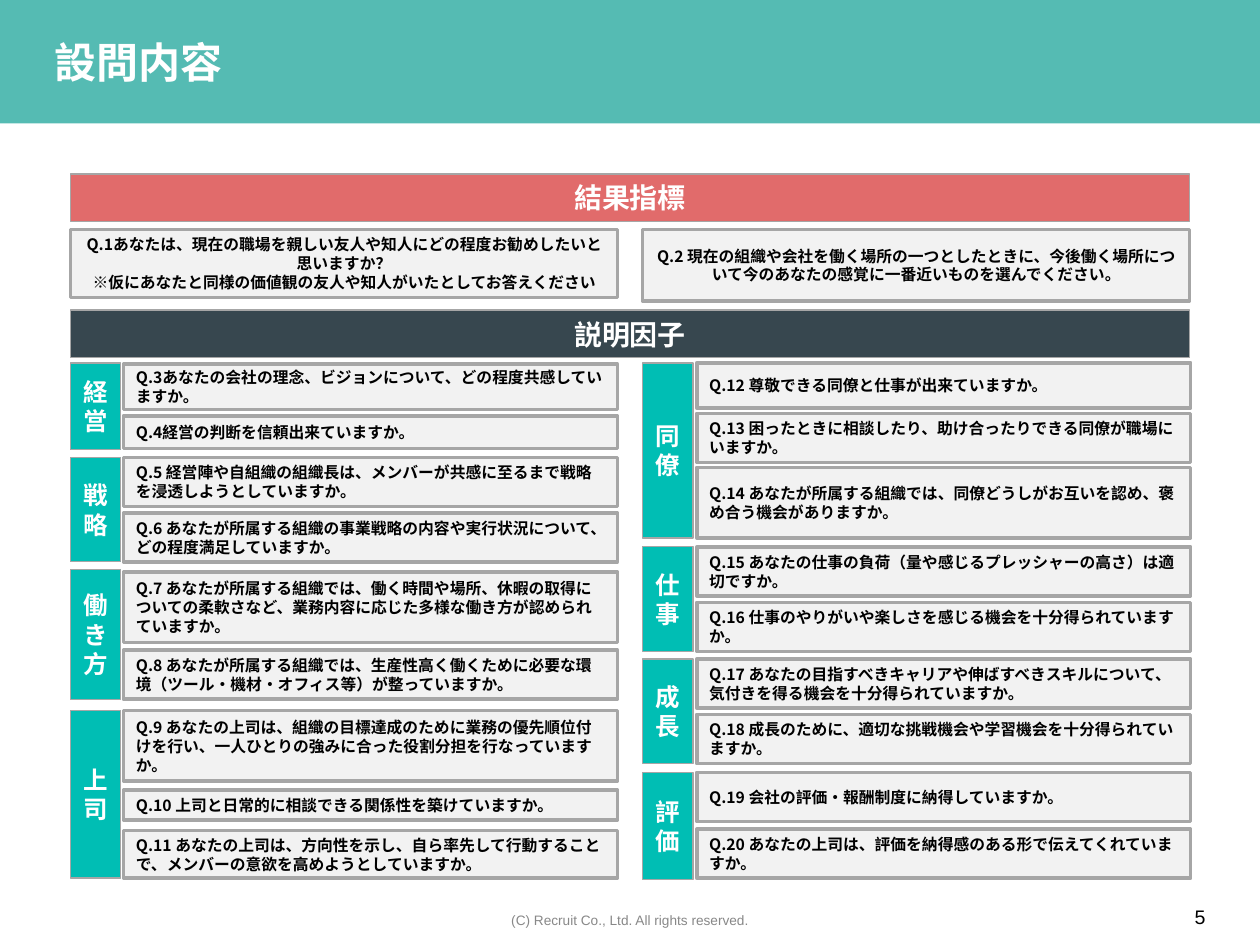
from dataclasses import dataclass

import pptx
import pptx.dml.color
import pptx.enum.shapes
import pptx.enum.text
import pptx.oxml
import pptx.oxml.ns
import pptx.util

Inches = pptx.util.Inches
Align = pptx.enum.text.PP_ALIGN
Anchor = pptx.enum.text.MSO_ANCHOR


@dataclass(frozen=True)
class Theme:
    font: str = "Noto Sans CJK JP"
    small_font: str = "Arial"
    header: str = "55BBB3"
    result: str = "E16B6B"
    factor: str = "37474F"
    category: str = "00BEB4"
    question: str = "F2F2F2"
    border: str = "A6A6A6"
    white: str = "FFFFFF"
    black: str = "000000"
    grey: str = "888888"
    title_size: float = 24
    banner_size: float = 16
    category_size: float = 14
    question_size: float = 9
    number_size: float = 11.2
    footer_size: float = 7.8


@dataclass(frozen=True)
class Question:
    top: float
    height: float
    text: str


@dataclass(frozen=True)
class Category:
    name: str
    top: float
    height: float
    questions: tuple[Question, ...]


@dataclass(frozen=True)
class Column:
    left: float
    question_left: float
    categories: tuple[Category, ...]


THEME = Theme()
CONTENT_LEFT, CONTENT_WIDTH = 0.56, 8.88
CATEGORY_WIDTH, QUESTION_WIDTH, RESULT_WIDTH = 0.4, 3.92, 4.34

LEFT_COLUMN = Column(CONTENT_LEFT, 0.98, (
    Category("経営", 2.88, 0.69, (
        Question(2.89, 0.36, "Q.3あなたの会社の理念、ビジョンについて、どの程度共感していますか。"),
        Question(3.3, 0.26, "Q.4経営の判断を信頼出来ていますか。"))),
    Category("戦略", 3.63, 0.83, (
        Question(3.63, 0.39, "Q.5 経営陣や自組織の組織長は、メンバーが共感に至るまで戦略を浸透しようとしていますか。"),
        Question(4.07, 0.39, "Q.6 あなたが所属する組織の事業戦略の内容や実行状況について、どの程度満足していますか。"))),
    Category("働き方", 4.52, 1.03, (
        Question(4.54, 0.56, "Q.7 あなたが所属する組織では、働く時間や場所、休暇の取得についての柔軟さなど、"
                             "業務内容に応じた多様な働き方が認められていますか。"),
        Question(5.16, 0.39, "Q.8 あなたが所属する組織では、生産性高く働くために必要な環境"
                             "（ツール・機材・オフィス等）が整っていますか。"))),
    Category("上司", 5.64, 1.33, (
        Question(5.64, 0.56, "Q.9 あなたの上司は、組織の目標達成のために業務の優先順位付けを行い、"
                             "一人ひとりの強みに合った役割分担を行なっていますか。"),
        Question(6.27, 0.24, "Q.10 上司と日常的に相談できる関係性を築けていますか。"),
        Question(6.59, 0.38, "Q.11 あなたの上司は、方向性を示し、自ら率先して行動することで、"
                             "メンバーの意欲を高めようとしていますか。"))),
))
RIGHT_COLUMN = Column(5.1, 5.53, (
    Category("同僚", 2.88, 1.39, (
        Question(2.88, 0.36, "Q.12 尊敬できる同僚と仕事が出来ていますか。"),
        Question(3.28, 0.39, "Q.13 困ったときに相談したり、助け合ったりできる同僚が職場にいますか。"),
        Question(3.71, 0.56, "Q.14 あなたが所属する組織では、同僚どうしがお互いを認め、褒め合う機会がありますか。"))),
    Category("仕事", 4.34, 0.83, (
        Question(4.34, 0.39, "Q.15 あなたの仕事の負荷（量や感じるプレッシャーの高さ）は適切ですか。"),
        Question(4.78, 0.39, "Q.16 仕事のやりがいや楽しさを感じる機会を十分得られていますか。"))),
    Category("成長", 5.23, 0.83, (
        Question(5.23, 0.39, "Q.17 あなたの目指すべきキャリアや伸ばすべきスキルについて、"
                             "気付きを得る機会を十分得られていますか。"),
        Question(5.67, 0.39, "Q.18 成長のために、適切な挑戦機会や学習機会を十分得られていますか。"))),
    Category("評価", 6.13, 0.85, (
        Question(6.13, 0.39, "Q.19 会社の評価・報酬制度に納得していますか。"),
        Question(6.58, 0.39, "Q.20 あなたの上司は、評価を納得感のある形で伝えてくれていますか。"))),
))


def color(value: str) -> pptx.dml.color.RGBColor:
    return pptx.dml.color.RGBColor.from_string(value)


def write_text(box, text: str, *, size: float, ink: str, font: str = THEME.font,
               bold: bool = True, align=Align.CENTER, anchor=Anchor.MIDDLE,
               insets: tuple[float, float] = (0.1, 0.05), wrap: bool = True) -> None:
    """Fill a shape with one paragraph per line of text."""
    frame = box.text_frame
    frame.word_wrap = wrap
    frame.vertical_anchor = anchor
    frame.margin_left = frame.margin_right = Inches(insets[0])
    frame.margin_top = frame.margin_bottom = Inches(insets[1])
    for index, line in enumerate(text.split("\n")):
        para = frame.add_paragraph() if index else frame.paragraphs[0]
        para.alignment = align
        span = para.add_run()
        span.text = line
        span.font.name = font
        span.font.size = pptx.util.Pt(size)
        span.font.bold = bold
        span.font.color.rgb = color(ink)
        # Japanese characters take the East Asian typeface
        east_asian = pptx.oxml.parse_xml(
            f'<a:ea {pptx.oxml.ns.nsdecls("a")} typeface="{font}"/>')
        span.font._element.append(east_asian)


def add_box(page, left: float, top: float, width: float, height: float,
            fill: str, line_width: float = 0):
    box = page.shapes.add_shape(pptx.enum.shapes.MSO_SHAPE.RECTANGLE, Inches(left),
                                Inches(top), Inches(width), Inches(height))
    box.shadow.inherit = False
    box.fill.solid()
    box.fill.fore_color.rgb = color(fill)
    if line_width:
        box.line.color.rgb = color(THEME.border)
        box.line.width = pptx.util.Pt(line_width)
    else:
        box.line.fill.background()
    return box


def add_label(page, left: float, top: float, width: float, height: float,
              text: str, fill: str, size: float) -> None:
    box = add_box(page, left, top, width, height, fill, 0.75)
    write_text(box, text, size=size, ink=THEME.white, insets=(0.1, 0.1))


def add_question(page, left: float, width: float, question: Question,
                 align=Align.LEFT) -> None:
    box = add_box(page, left, question.top, width, question.height, THEME.question, 2)
    write_text(box, question.text, size=THEME.question_size, ink=THEME.black, align=align)


def add_column(page, column: Column) -> None:
    for category in column.categories:
        add_label(page, column.left, category.top, CATEGORY_WIDTH, category.height,
                  category.name, THEME.category, THEME.category_size)
        for question in category.questions:
            add_question(page, column.question_left, QUESTION_WIDTH, question)


def add_note(page, left: float, top: float, width: float, height: float,
             text: str, **text_format) -> None:
    box = page.shapes.add_textbox(Inches(left), Inches(top), Inches(width), Inches(height))
    write_text(box, text, **text_format)


def main() -> None:
    deck = pptx.Presentation()
    deck.slide_width, deck.slide_height = Inches(10), Inches(7.5)
    page = deck.slides.add_slide(deck.slide_layouts[6])

    # Header, footer and page number
    add_box(page, 0, 0, 10, 0.98, THEME.header)
    add_note(page, 0.43, 0.29, 1.35, 0.4, "設問内容", size=THEME.title_size,
             ink=THEME.white, align=Align.LEFT, insets=(0, 0), wrap=False)
    add_note(page, 2.22, 7.19, 5.56, 0.23, "(C) Recruit Co., Ltd. All rights reserved.",
             size=THEME.footer_size, ink=THEME.grey, font=THEME.small_font,
             bold=False, insets=(0.03, 0.05))
    add_note(page, 9.23, 7.12, 0.59, 0.29, "5", size=THEME.number_size, ink=THEME.black,
             font=THEME.small_font, bold=False, anchor=Anchor.TOP, insets=(0.06, 0.06))

    # Result indicators
    add_label(page, CONTENT_LEFT, 1.38, CONTENT_WIDTH, 0.38, "結果指標",
              THEME.result, THEME.banner_size)
    add_question(page, LEFT_COLUMN.left, RESULT_WIDTH, Question(
        1.82, 0.54, "Q.1あなたは、現在の職場を親しい友人や知人にどの程度お勧めしたいと思いますか？\n"
                    "※仮にあなたと同様の価値観の友人や知人がいたとしてお答えください"), Align.CENTER)
    add_question(page, RIGHT_COLUMN.left, RESULT_WIDTH, Question(
        1.82, 0.57, "Q.2 現在の組織や会社を働く場所の一つとしたときに、"
                    "今後働く場所について今のあなたの感覚に一番近いものを選んでください。"), Align.CENTER)

    # Explanatory factors
    add_label(page, CONTENT_LEFT, 2.46, CONTENT_WIDTH, 0.38, "説明因子",
              THEME.factor, THEME.banner_size)
    for column in (LEFT_COLUMN, RIGHT_COLUMN):
        add_column(page, column)

    deck.save("out.pptx")


if __name__ == "__main__":
    main()
